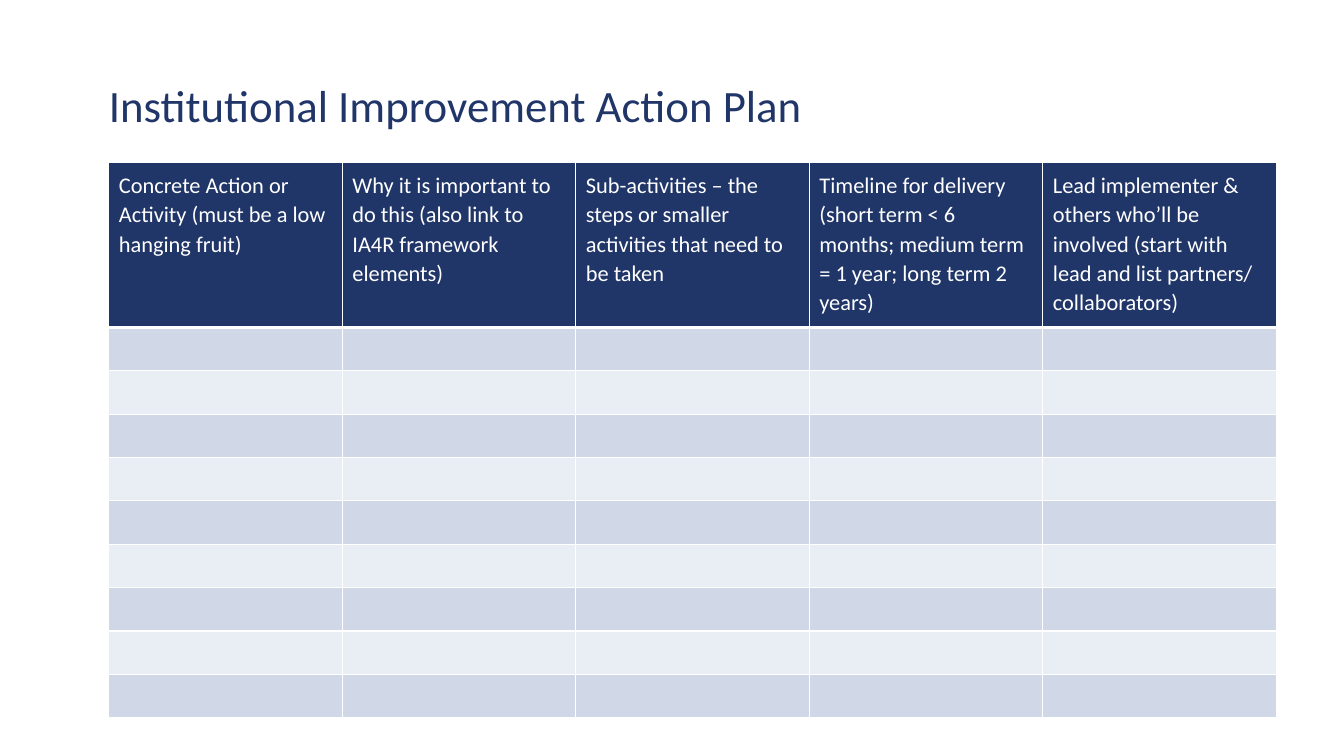
"""Build the institutional improvement action plan slide."""
import pptx
import pptx.dml.color
import pptx.enum.text
import pptx.oxml
import pptx.oxml.ns
import pptx.util
from pptx.util import Inches

NAVY = pptx.dml.color.RGBColor(0x20, 0x35, 0x68)
WHITE = pptx.dml.color.RGBColor(0xFF, 0xFF, 0xFF)
BAND_DARK = pptx.dml.color.RGBColor(0xD0, 0xD8, 0xE8)
BAND_LIGHT = pptx.dml.color.RGBColor(0xE9, 0xED, 0xF4)

HEADINGS = [
    "Concrete Action or Activity (must be a low hanging fruit)",
    "Why it is important to do this (also link to IA4R framework elements)",
    "Sub-activities – the steps or smaller activities that need to be taken",
    "Timeline for delivery (short term < 6 months; medium term = 1 year; long term 2 years)",
    "Lead implementer & others who’ll be involved (start with lead and list partners/ collaborators)",
]
EMPTY_ROWS = 9
LEFT, WIDTH = 1.08, 11.58
HEADER_HEIGHT, ROW_HEIGHT = 1.64, 0.43


def style_run(run, size, color):
    run.font.name = "Calibri"
    run.font.size = pptx.util.Pt(size)
    run.font.bold = False
    run.font.color.rgb = color


def add_border(cell, side, points):
    cell_properties = cell._tc.get_or_add_tcPr()
    cell_properties.append(pptx.oxml.parse_xml(
        f'<a:{side} {pptx.oxml.ns.nsdecls("a")} w="{pptx.util.Pt(points)}">'
        f'<a:solidFill><a:srgbClr val="{WHITE}"/></a:solidFill></a:{side}>'))


presentation = pptx.Presentation()
presentation.slide_width = Inches(13.33)
presentation.slide_height = Inches(7.5)
slide = presentation.slides.add_slide(presentation.slide_layouts[6])

title = slide.shapes.add_textbox(Inches(LEFT), Inches(0.5), Inches(WIDTH), Inches(1.08))
title_frame = title.text_frame
title_frame.word_wrap = True
title_frame.vertical_anchor = pptx.enum.text.MSO_ANCHOR.MIDDLE
title_frame.margin_left = title_frame.margin_right = 0
title_frame.margin_top = title_frame.margin_bottom = 0
title_frame.text = "Institutional Improvement Action Plan"
style_run(title_frame.paragraphs[0].runs[0], 32, NAVY)

table = slide.shapes.add_table(
    EMPTY_ROWS + 1, len(HEADINGS), Inches(LEFT), Inches(1.61),
    Inches(WIDTH), Inches(HEADER_HEIGHT + EMPTY_ROWS * ROW_HEIGHT)).table

for row_index, row in enumerate(table.rows):
    row.height = Inches(ROW_HEIGHT if row_index else HEADER_HEIGHT)
    if row_index == 0:
        row_fill = NAVY
    else:
        row_fill = BAND_DARK if row_index % 2 else BAND_LIGHT
    for cell in row.cells:
        add_border(cell, "lnL", 1)
        add_border(cell, "lnR", 1)
        add_border(cell, "lnT", 3 if row_index == 1 else 1)
        add_border(cell, "lnB", 3 if row_index == 0 else 1)
        cell.fill.solid()
        cell.fill.fore_color.rgb = row_fill

for cell, heading in zip(table.rows[0].cells, HEADINGS):
    cell.margin_left = cell.margin_right = Inches(0.1)
    cell.margin_top = cell.margin_bottom = Inches(0.08)
    cell.text_frame.text = heading
    paragraph = cell.text_frame.paragraphs[0]
    paragraph.line_spacing = 1.07
    style_run(paragraph.runs[0], 16, WHITE)

presentation.save("out.pptx")
